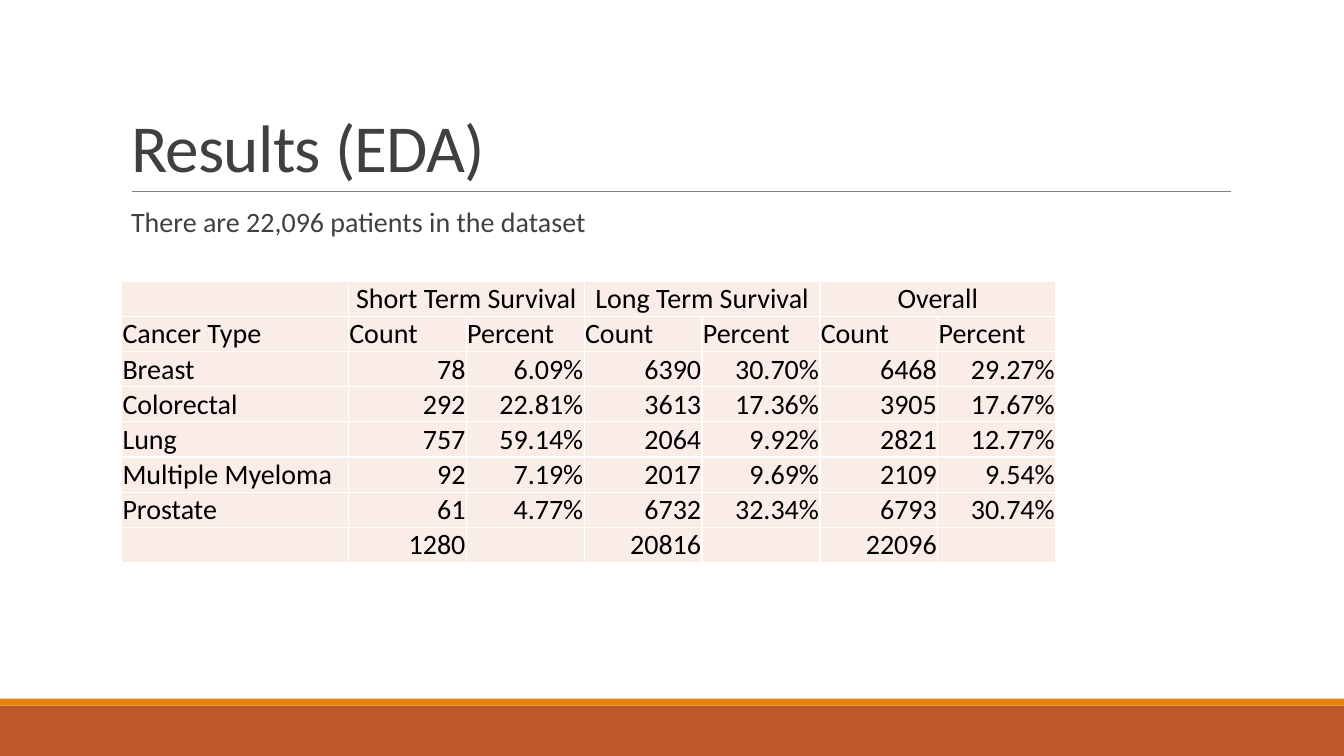
"""Builds the exploratory results slide with its survival table."""
from dataclasses import dataclass

from lxml.etree import SubElement
from pptx import Presentation
from pptx.dml.color import RGBColor
from pptx.enum.shapes import MSO_CONNECTOR, MSO_SHAPE
from pptx.enum.text import MSO_ANCHOR as Anchor, MSO_AUTO_SIZE as AutoSize, PP_ALIGN as Align
from pptx.oxml.ns import qn
from pptx.util import Pt


@dataclass(frozen=True)
class Theme:
    """Colours, font and type sizes of the slide."""
    font: str = "Calibri"
    heading: str = "404040"
    ink: str = "000000"
    rule: str = "808080"
    footer: str = "BD582C"
    accent: str = "E48312"
    cell: str = "FAEDE7"
    border: str = "FFFFFF"
    title_size: int = 48
    text_size: int = 20


THEME = Theme()

GROUPS = ["Short Term Survival", "Long Term Survival", "Overall"]
ROWS = [
    ["Cancer Type"] + ["Count", "Percent"] * len(GROUPS),
    ["Breast", "78", "6.09%", "6390", "30.70%", "6468", "29.27%"],
    ["Colorectal", "292", "22.81%", "3613", "17.36%", "3905", "17.67%"],
    ["Lung", "757", "59.14%", "2064", "9.92%", "2821", "12.77%"],
    ["Multiple Myeloma", "92", "7.19%", "2017", "9.69%", "2109", "9.54%"],
    ["Prostate", "61", "4.77%", "6732", "32.34%", "6793", "30.74%"],
    ["", "1280", "", "20816", "", "22096", ""],
]


def place(shape, left, top, width, height):
    """Move and size a shape in points."""
    shape.left, shape.top = Pt(left), Pt(top)
    shape.width, shape.height = Pt(width), Pt(height)


def add_run(paragraph, text, size, color):
    """Add one formatted run and return it."""
    run = paragraph.add_run()
    run.text = text
    run.font.name = THEME.font
    run.font.size = Pt(size)
    run.font.color.rgb = RGBColor.from_string(color)
    return run


def add_band(slide, top, height, color):
    """Add a full-width band."""
    band = slide.shapes.add_shape(MSO_SHAPE.RECTANGLE, 0, Pt(top), Pt(960), Pt(height))
    band.shadow.inherit = False
    band.fill.solid()
    band.fill.fore_color.rgb = RGBColor.from_string(color)
    band.line.fill.background()


def add_rule(slide, left, right, y):
    """Add the thin line below the title."""
    rule = slide.shapes.add_connector(MSO_CONNECTOR.STRAIGHT, Pt(left), Pt(y), Pt(right), Pt(y))
    rule.line.color.rgb = RGBColor.from_string(THEME.rule)
    rule.line.width = Pt(0.5)
    SubElement(rule.element.spPr, qn("a:effectLst"))


def fill_title(title, text):
    """Place and write the title."""
    place(title, 86.4, 22.6, 792, 114.2)
    frame = title.text_frame
    frame.auto_size = AutoSize.NONE
    frame.vertical_anchor = Anchor.BOTTOM
    paragraph = frame.paragraphs[0]
    paragraph.alignment = Align.LEFT
    paragraph.line_spacing = 0.85
    run = add_run(paragraph, text, THEME.title_size, THEME.heading)
    run.font._element.set("spc", "-50")


def fill_body(body, text):
    """Place and write the lead sentence with its blank bullet."""
    place(body, 86.4, 145.4, 792, 316.8)
    frame = body.text_frame
    frame.auto_size = AutoSize.NONE
    frame.margin_left = frame.margin_right = 0
    paragraph = frame.paragraphs[0]
    paragraph.line_spacing = 0.9
    paragraph.space_before, paragraph.space_after = Pt(12), Pt(2)
    properties = paragraph._p.get_or_add_pPr()
    properties.set("marL", str(Pt(7.2)))
    properties.set("indent", str(-Pt(7.2)))
    SubElement(SubElement(properties, qn("a:buClr")), qn("a:srgbClr"), val=THEME.accent)
    SubElement(properties, qn("a:buChar"), char=" ")
    add_run(paragraph, text, THEME.text_size, THEME.heading)


def style_cell(cell):
    """Give a cell its margins, borders and fill."""
    cell.margin_left = cell.margin_right = cell.margin_top = Pt(0.6)
    cell.margin_bottom = 0
    cell.vertical_anchor = Anchor.BOTTOM
    properties = cell._tc.get_or_add_tcPr()
    for side in ("lnL", "lnR", "lnT", "lnB"):
        line = SubElement(properties, qn(f"a:{side}"), w=str(Pt(1)))
        SubElement(SubElement(line, qn("a:solidFill")), qn("a:srgbClr"), val=THEME.border)
    cell.fill.solid()
    cell.fill.fore_color.rgb = RGBColor.from_string(THEME.cell)


def write_cell(cell, text, alignment):
    """Write aligned text in a cell."""
    paragraph = cell.text_frame.paragraphs[0]
    paragraph.alignment = alignment
    add_run(paragraph, text, THEME.text_size, THEME.ink)


def add_survival_table(slide):
    """Add the table of counts and percentages by survival group."""
    row_count, column_count = len(ROWS) + 1, len(ROWS[0])
    frame = slide.shapes.add_table(
        row_count, column_count, Pt(86.9), Pt(200.9), Pt(667.2), Pt(25 * row_count))
    table = frame.table
    table.first_row = table.horz_banding = False
    for index, column in enumerate(table.columns):
        column.width = Pt(84.2 if index else 162)
    for cell in table.iter_cells():
        style_cell(cell)
    for index, group in enumerate(GROUPS):
        first = 1 + 2 * index
        table.cell(0, first).merge(table.cell(0, first + 1))
        write_cell(table.cell(0, first), group, Align.CENTER)
    for row, values in enumerate(ROWS, start=1):
        for column, value in enumerate(values):
            if value:
                is_number = row > 1 and column > 0
                write_cell(table.cell(row, column), value, Align.RIGHT if is_number else Align.LEFT)


def main():
    """Build and save the slide."""
    deck = Presentation()
    deck.slide_width, deck.slide_height = Pt(960), Pt(540)
    slide = deck.slides.add_slide(deck.slide_layouts[1])
    add_band(slide, 504, 36, THEME.footer)
    add_band(slide, 499, 5, THEME.accent)
    add_rule(slide, 94, 879, 136.8)
    fill_title(slide.shapes.title, "Results (EDA)")
    fill_body(slide.placeholders[1], "There are 22,096 patients in the dataset")
    add_survival_table(slide)
    deck.save("out.pptx")


if __name__ == "__main__":
    main()
